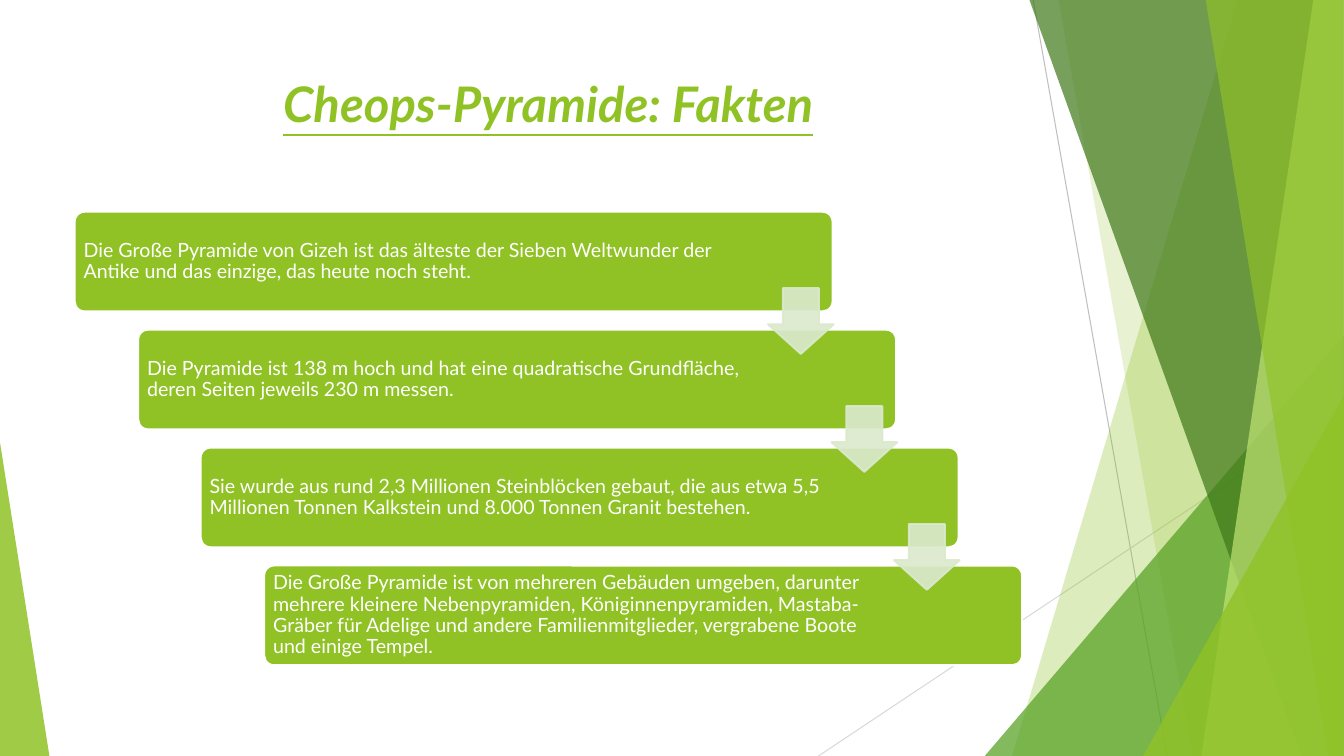
from lxml import etree
from pptx import Presentation
from pptx import util as u
from pptx.dml.color import RGBColor
from pptx.enum import shapes, text
from pptx.oxml.ns import qn

PX = 9144  # 100 px to the inch
GREEN, PALE, WHITE = "90C226", "DBE9CD", "FFFFFF"


def paint(fill, color, opacity=100):
    fill.solid()
    fill.fore_color.rgb = RGBColor.from_string(color)
    if opacity < 100:
        value = fill._xPr.find(qn("a:solidFill"))[0]
        etree.SubElement(value, qn("a:alpha"), val=str(opacity * 1000))


def write(content, place, size, color, inset=6, bold=False, italic=False,
          underline=False, align=text.PP_ALIGN.LEFT,
          anchor=text.MSO_ANCHOR.MIDDLE, spacing=1.0):
    box = page.shapes.add_textbox(*[n * PX for n in place])
    frame = box.text_frame
    frame.word_wrap = True
    frame.vertical_anchor = anchor
    frame.margin_left = frame.margin_right = inset * PX
    frame.margin_top = frame.margin_bottom = min(inset, 6) * PX
    para = frame.paragraphs[0]
    para.alignment = align
    para.line_spacing = spacing
    span = para.add_run()
    span.text = content
    span.font.name = "Lato"
    span.font.size = u.Pt(size)
    span.font.bold = bold
    span.font.italic = italic
    span.font.underline = underline
    paint(span.font.fill, color)


deck = Presentation()
deck.slide_width, deck.slide_height = u.Emu(12192000), u.Emu(750 * PX)
page = deck.slides.add_slide(deck.slide_layouts[6])

# Thin lines behind the facets
for ends, color in [((1025, 0, 1158, 750), "BFBFBF"),
                    ((1333, 403, 812, 750), "D9D9D9")]:
    line = page.shapes.add_connector(shapes.MSO_CONNECTOR.STRAIGHT,
                                     *[n * PX for n in ends])
    line.line.width = u.Pt(0.75)
    paint(line.line.fill, color)
    etree.SubElement(line._element.spPr, qn("a:effectLst"))

# Facets reaching the right edge: (top x, bottom x), or
# triangles: (left, top, width, height, apex)
facets = [
    ((1228, 1004), GREEN, 30),
    ((1050, 1183), GREEN, 20),
    ((977, 333, 356, 417, 1), "54A021", 72),
    ((1021, 1291), "3F7819", 70),
    ((1303, 1192), "C0E474", 70),
    ((1196, 1318), GREEN, 65),
    ((1134, 393, 199, 357, 1), GREEN, 80),
    ((0, 439, 49, 311, 0), GREEN, 85),
]
for outline, color, opacity in facets:
    if len(outline) == 2:
        top, bottom = outline
        builder = page.shapes.build_freeform(top, -1, scale=PX)
        builder.add_line_segments([(1333, -1), (1333, 750), (bottom, 750)])
        facet = builder.convert_to_shape()
    else:
        *place, apex = outline
        facet = page.shapes.add_shape(shapes.MSO_SHAPE.ISOSCELES_TRIANGLE,
                                      *[n * PX for n in place])
        facet.adjustments[0] = apex
    facet.shadow.inherit = False
    facet.line.fill.background()
    paint(facet.fill, color, opacity)

# Title
write("Cheops-Pyramide: Fakten", (74, 67, 940, 88), 35, GREEN, inset=10,
      bold=True, italic=True, underline=True, align=text.PP_ALIGN.CENTER,
      anchor=text.MSO_ANCHOR.TOP)

# Staircase of facts
facts = [
    "Die Große Pyramide von Gizeh ist das älteste der Sieben Weltwunder der "
    "Antike und das einzige, das heute noch steht.",
    "Die Pyramide ist 138 m hoch und hat eine quadratische Grundfläche, "
    "deren Seiten jeweils 230 m messen.",
    "Sie wurde aus rund 2,3 Millionen Steinblöcken gebaut, die aus etwa 5,5 "
    "Millionen Tonnen Kalkstein und 8.000 Tonnen Granit bestehen.",
    "Die Große Pyramide ist von mehreren Gebäuden umgeben, darunter mehrere "
    "kleinere Nebenpyramiden, Königinnenpyramiden, Mastaba-Gräber für Adelige "
    "und andere Familienmitglieder, vergrabene Boote und einige Tempel.",
]
steps = [(round(62.67 * i), 117 * i) for i in range(len(facts))]
for (dx, dy), fact in zip(steps, facts):
    card = page.shapes.add_shape(
        shapes.MSO_SHAPE.ROUNDED_RECTANGLE,
        *[n * PX for n in (74 + dx, 210 + dy, 752, 99)])
    card.adjustments[0] = 0.1
    card.shadow.inherit = False
    card.line.width = u.Pt(1.5)
    paint(card.fill, GREEN)
    paint(card.line.fill, WHITE)
    width = 620 if dx else 637
    write(fact, (77 + dx, 213 + dy, width, 93), 14, WHITE, spacing=0.9)

# Arrows from each fact to the next
for dx, dy in steps[:-1]:
    arrow = page.shapes.add_shape(
        shapes.MSO_SHAPE.DOWN_ARROW,
        *[n * PX for n in (762 + dx, 286 + dy, 65, 65)])
    arrow.adjustments[0], arrow.adjustments[1] = 0.55, 0.45
    arrow.shadow.inherit = False
    arrow.line.width = u.Pt(1.5)
    paint(arrow.fill, PALE, 90)
    paint(arrow.line.fill, PALE, 90)

deck.save("out.pptx")
